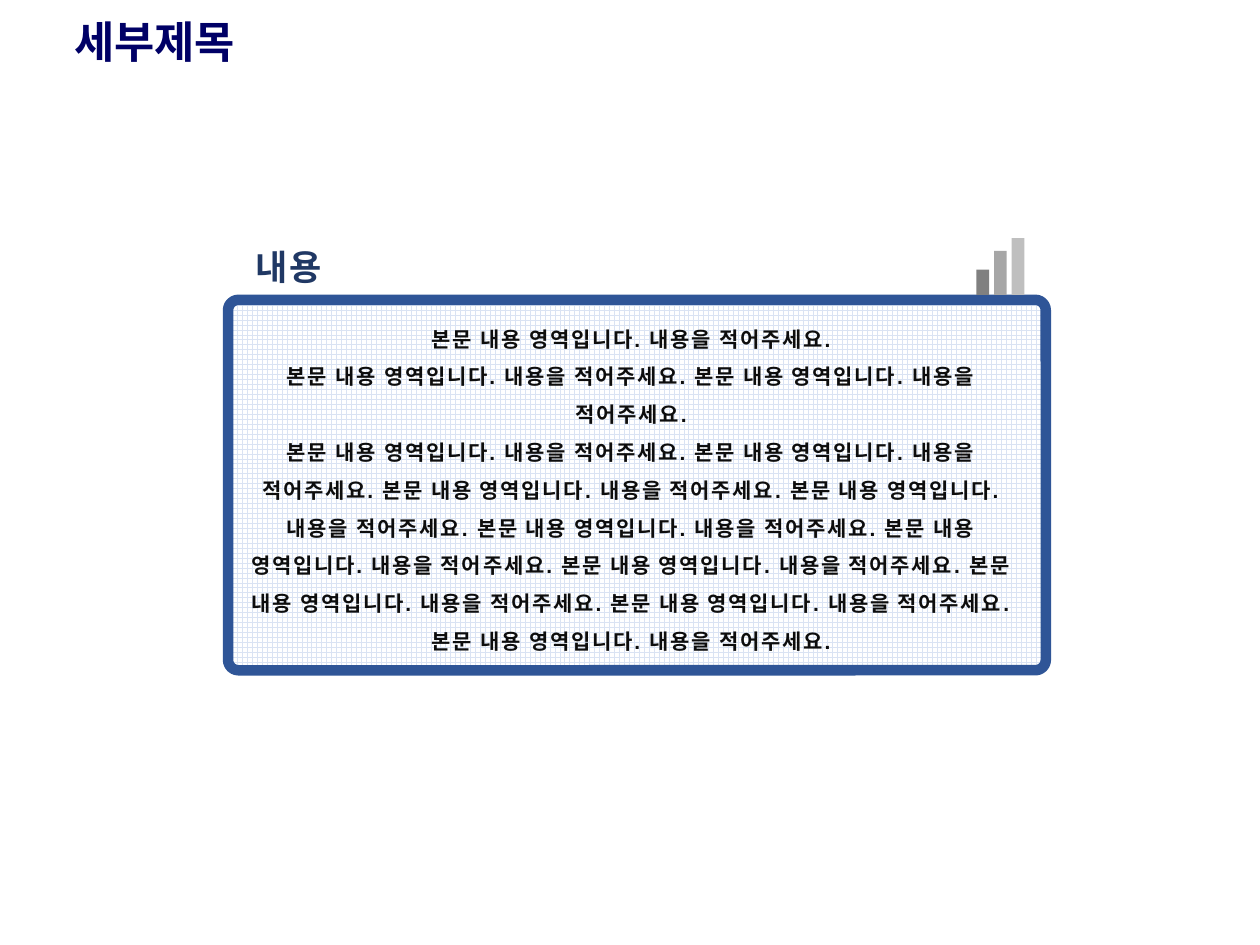
"""Build a slide with a title, a framed text panel and a small bar motif."""
from dataclasses import dataclass

import pptx
import pptx.dml.color
import pptx.enum.dml
import pptx.enum.shapes
import pptx.enum.text
import pptx.oxml.ns
import pptx.util

COLS, ROWS = 100, 75
CELL = pptx.util.Inches(0.1)
KINDS = pptx.enum.shapes.MSO_SHAPE
ALIGN = pptx.enum.text.PP_ALIGN
LINE = "본문 내용 영역입니다. 내용을 적어주세요."


@dataclass
class Box:
    """A place on the grid, in columns and rows."""
    left: float
    top: float
    width: float
    height: float

    def span(self) -> list[int]:
        """Return the place as slide lengths."""
        return [round(n * CELL) for n in (self.left, self.top, self.width, self.height)]


@dataclass
class Style:
    """The look of a paragraph."""
    font: str
    size: float
    color: str
    align: ALIGN
    lead: float = 1.0
    track: int = 0


@dataclass
class Note:
    """A text box with its paragraphs."""
    box: Box
    style: Style
    lines: list[str]


@dataclass
class Bar:
    """One bar of the motif."""
    height: float
    color: str


NOTES = [
    Note(Box(18.1, 19, 9.7, 4.4), Style("Arial", 20, "203864", ALIGN.CENTER, 1, 100), ["내용"]),
    Note(Box(18.1, 24.4, 64, 28.3), Style("Arial", 12, "0D0D0D", ALIGN.CENTER, 1.5, 100),
         [" ".join([LINE] * count) for count in (1, 2, 10)]),
]
BARS = [Bar(2, "808080"), Bar(3.5, "A6A6A6"), Bar(4.5, "BFBFBF")]
BAR_LEFT, BAR_STEP, BAR_BASE = 77.5, 1.4, 23.4


def tint(code: str) -> pptx.dml.color.RGBColor:
    """Turn a hex string into a colour."""
    return pptx.dml.color.RGBColor.from_string(code)


def dress(para, style: Style) -> None:
    """Give a paragraph its style."""
    para.alignment = style.align
    para.line_spacing = style.lead
    font = para.font
    font.name = style.font
    font.size = pptx.util.Pt(style.size)
    font.bold = True
    font.color.rgb = tint(style.color)
    if style.track:
        para._p.pPr.find(pptx.oxml.ns.qn("a:defRPr")).set("spc", str(style.track))


def draw_title(slide, text: str) -> None:
    """Place and format the title."""
    title = slide.shapes.title
    title.left, title.top, title.width, title.height = Box(0, 0, 86.2, 7).span()
    title.text_frame.vertical_anchor = pptx.enum.text.MSO_ANCHOR.MIDDLE
    para = title.text_frame.paragraphs[0]
    para.text = text
    props = para._p.get_or_add_pPr()
    props.set("marL", "0")
    props.set("indent", str(pptx.util.Inches(0.49)))
    dress(para, Style("Calibri", 25, "000066", ALIGN.LEFT, 0.9))


def draw_panel(slide, box: Box) -> None:
    """Draw the rounded frame with its grid pattern."""
    panel = slide.shapes.add_shape(KINDS.ROUNDED_RECTANGLE, *box.span())
    panel.shadow.inherit = False
    panel.adjustments[0] = 0.028
    panel.fill.patterned()
    panel.fill.pattern = pptx.enum.dml.MSO_PATTERN.LARGE_GRID
    panel.fill.fore_color.rgb = tint("DAE3F3")
    panel.fill.back_color.rgb = tint("FFFFFF")
    panel.line.color.rgb = tint("2F5597")
    panel.line.width = pptx.util.Pt(6)


def draw_note(slide, note: Note) -> None:
    """Draw a text box."""
    frame = slide.shapes.add_textbox(*note.box.span()).text_frame
    frame.word_wrap = True
    frame.auto_size = pptx.enum.text.MSO_AUTO_SIZE.SHAPE_TO_FIT_TEXT
    frame.text = "\n".join(note.lines)
    for para in frame.paragraphs:
        dress(para, note.style)


def draw_bar(slide, left: float, bar: Bar) -> None:
    """Draw a bar that stands on the base line."""
    box = Box(left, BAR_BASE - bar.height, 1, bar.height)
    shape = slide.shapes.add_shape(KINDS.RECTANGLE, *box.span())
    shape.shadow.inherit = False
    shape.fill.solid()
    shape.fill.fore_color.rgb = tint(bar.color)
    shape.line.fill.background()


def main() -> None:
    """Build and save the slide."""
    deck = pptx.Presentation()
    deck.slide_width, deck.slide_height = COLS * CELL, ROWS * CELL
    slide = deck.slides.add_slide(deck.slide_layouts.get_by_name("Title Only"))
    draw_title(slide, "세부제목")
    draw_panel(slide, Box(18.1, 23.8, 64.9, 29.4))
    for note in NOTES:
        draw_note(slide, note)
    for place, bar in reversed(list(enumerate(BARS))):
        draw_bar(slide, BAR_LEFT + place * BAR_STEP, bar)
    deck.save("out.pptx")


if __name__ == "__main__":
    main()
